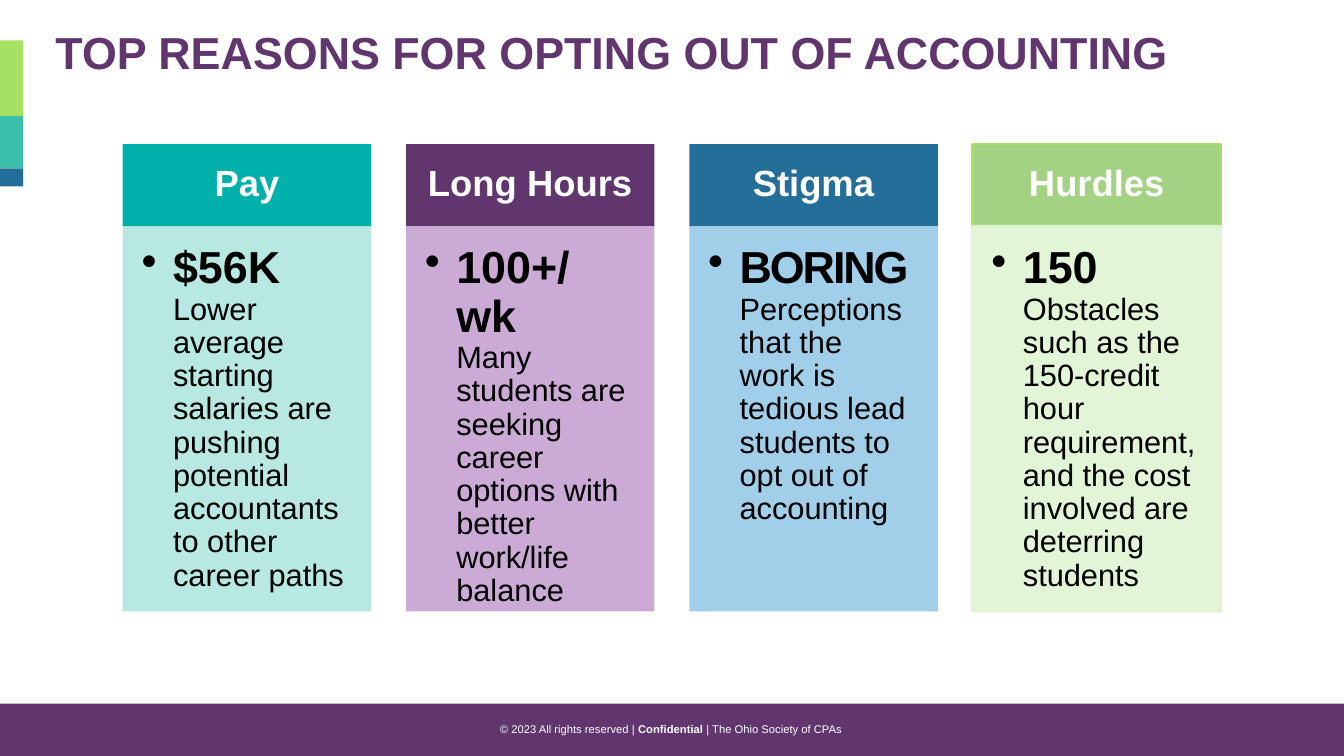
import pptx
import pptx.util
import pptx.dml.color
import pptx.enum.shapes
import pptx.enum.text
import lxml.etree

Pt = pptx.util.Pt
ALIGN = pptx.enum.text.PP_ALIGN
ANCHOR = pptx.enum.text.MSO_ANCHOR
HUES = {
    "plum": "61366E", "lime": "A7E163", "mint": "3BBFAB", "blue": "246E9A",
    "teal": "00B0AA", "leaf": "A3D283", "white": "FFFFFF", "black": "000000",
    "pale teal": "B0E6DE", "pale plum": "C6A2D1", "pale blue": "97C9E7", "pale leaf": "E1F4D3",
}
BARS = [("lime", 54), ("mint", 37.4), ("blue", 13)]
CARDS = [
    ("Pay", "teal", "pale teal", None, "$56K", 0,
     "Lower average starting salaries are pushing potential accountants to other career paths"),
    ("Long Hours", "plum", "pale plum", None, "100+/wk", 0,
     "Many students are seeking career options with better work/life balance"),
    ("Stigma", "blue", "pale blue", None, "BORING", -1.5,
     "Perceptions that the work is tedious lead students to opt out of accounting"),
    ("Hurdles", "leaf", "pale leaf", ("lime", "pale leaf"), "150", 0,
     "Obstacles such as the 150-credit hour requirement, and the cost involved are deterring students"),
]


class Deck:
    """Holds the style and the current slide, and draws each kind of element."""

    def __init__(self):
        self.prs = pptx.Presentation()
        self.prs.slide_width, self.prs.slide_height = Pt(960), Pt(540)
        self.slide = self.prs.slides.add_slide(self.prs.slide_layouts[5])
        self.font = "Arial"

    def hue(self, name):
        return pptx.dml.color.RGBColor.from_string(HUES[name])

    def rect(self, x, y, w, h, fill, line=None, alpha=None):
        kind = pptx.enum.shapes.MSO_SHAPE.RECTANGLE
        box = self.slide.shapes.add_shape(kind, Pt(x), Pt(y), Pt(w), Pt(h))
        box.shadow.inherit = False
        box.fill.solid()
        box.fill.fore_color.rgb = self.hue(fill)
        if line:
            box.line.color.rgb = self.hue(line)
            box.line.width = Pt(2)
        else:
            box.line.fill.background()
        if alpha:
            for tone in box.element.spPr.iter(pptx.oxml.ns.qn("a:srgbClr")):
                mark = lxml.etree.SubElement(tone, pptx.oxml.ns.qn("a:alpha"))
                mark.set("val", str(alpha * 1000))
        return box

    def frame(self, box, pads, anchor, align):
        text = box.text_frame
        text.word_wrap = True
        text.auto_size = pptx.enum.text.MSO_AUTO_SIZE.NONE
        text.vertical_anchor = anchor
        text.margin_left, text.margin_top, text.margin_right, text.margin_bottom = map(Pt, pads)
        para = text.paragraphs[0]
        para.alignment = align
        return para

    def run(self, para, words, size, hue, bold=False, space=0):
        run = para.add_run()
        run.text = words
        run.font.name, run.font.size, run.font.bold = self.font, Pt(size), bold
        run.font.color.rgb = self.hue(hue)
        if space:
            run.font._element.set("spc", str(int(space * 100)))

    def title(self, words):
        box = self.slide.shapes.title
        box.left, box.top, box.width, box.height = Pt(32.4), Pt(13.7), Pt(894.2), Pt(61.2)
        para = self.frame(box, (7.2, 3.6, 7.2, 3.6), ANCHOR.TOP, ALIGN.LEFT)
        self.run(para, words, 32, "plum", True)

    def side(self, bars):
        y = 28.8
        for hue, h in bars:
            self.rect(0, y, 16.6, h, hue)
            y += h

    def foot(self, parts):
        self.rect(0, 502.6, 960, 37.4, "plum")
        box = self.slide.shapes.add_textbox(Pt(-0.7), Pt(512.6), Pt(960), Pt(17))
        para = self.frame(box, (7.2, 3.6, 7.2, 3.6), ANCHOR.TOP, ALIGN.CENTER)
        for words, bold in parts:
            self.run(para, words, 8, "white", bold)

    def card(self, x, head, dark, pale, lines, lead, space, words):
        edge, rim = lines or (None, None)
        box = self.rect(x, 102.9, 177.5, 58.8, dark, edge)
        para = self.frame(box, (14.4, 8.6, 14.4, 8.6), ANCHOR.MIDDLE, ALIGN.CENTER)
        para.line_spacing = 0.9
        self.run(para, head, 26, "white", True)

        box = self.rect(x, 161.7, 177.5, 275, pale, rim, 90)
        para = self.frame(box, (13.44, 13.44, 17.92, 20.16), ANCHOR.TOP, ALIGN.LEFT)
        para.line_spacing = 0.9
        self.bullet(para, 22.5)
        self.run(para, lead, 32, "black", True, space)
        para.add_line_break()
        self.run(para, words, 22, "black")

    def bullet(self, para, hang):
        props = para._p.get_or_add_pPr()
        props.set("marL", str(Pt(hang)))
        props.set("indent", str(-Pt(hang)))
        lxml.etree.SubElement(props, pptx.oxml.ns.qn("a:buChar")).set("char", "•")


def main():
    deck = Deck()
    deck.side(BARS)
    deck.foot([("© 2023 All rights reserved | ", False), ("Confidential", True),
               (" | The Ohio Society of CPAs", False)])
    deck.title("TOP REASONS FOR OPTING OUT OF ACCOUNTING")
    for i, card in enumerate(CARDS):
        deck.card(87.7 + 202.35 * i, *card)
    deck.prs.save("out.pptx")


if __name__ == "__main__":
    main()
